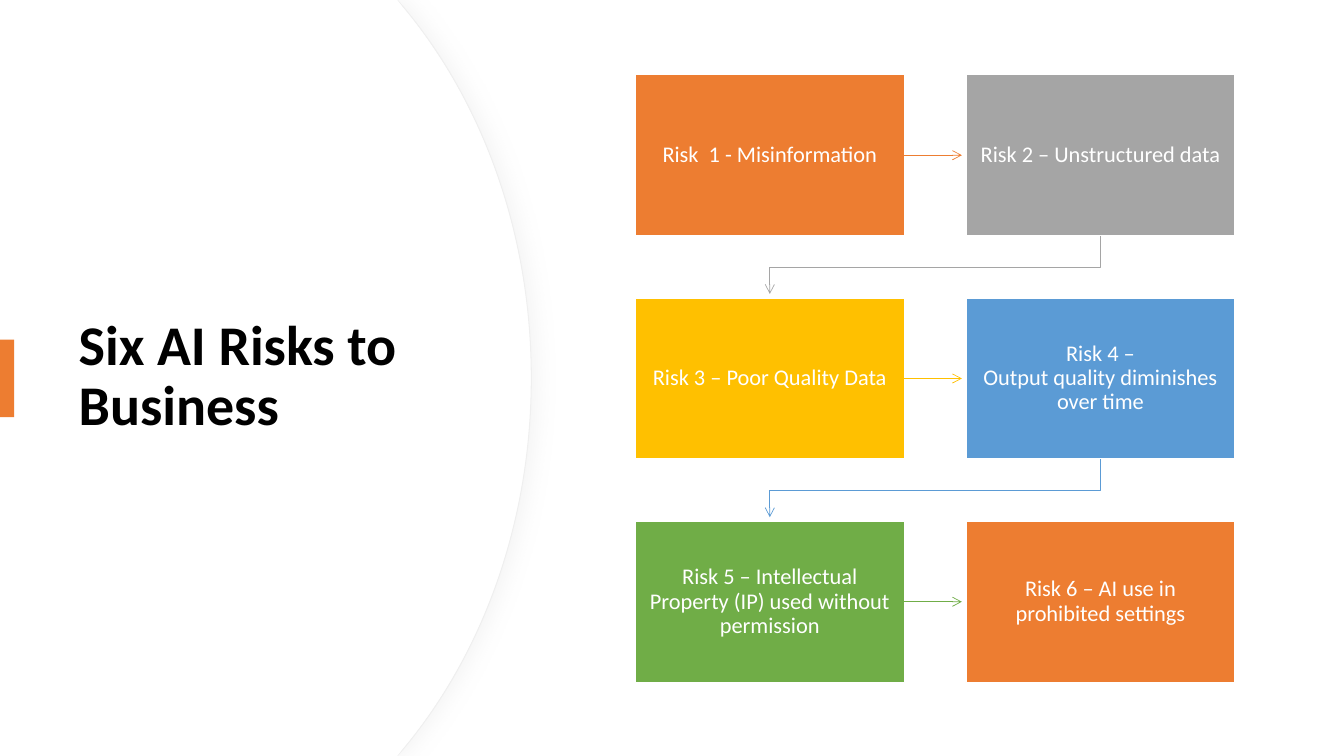
from lxml.etree import SubElement
from pptx import Presentation
from pptx.dml.color import RGBColor
from pptx.enum.shapes import MSO_CONNECTOR, MSO_SHAPE
from pptx.enum.text import MSO_ANCHOR, MSO_AUTO_SIZE, PP_ALIGN
from pptx.oxml import parse_xml
from pptx.oxml.ns import nsdecls, qn
from pptx.util import Inches, Pt

WHITE = RGBColor(0xFF, 0xFF, 0xFF)
BLACK = RGBColor(0, 0, 0)
EDGE = RGBColor(0xEF, 0xEF, 0xEF)
SHADE = RGBColor(0xD9, 0xD9, 0xD9)
ORANGE = RGBColor(0xED, 0x7D, 0x31)
GRAY = RGBColor(0xA5, 0xA5, 0xA5)
GOLD = RGBColor(0xFF, 0xC0, 0x00)
BLUE = RGBColor(0x5B, 0x9B, 0xD5)
GREEN = RGBColor(0x70, 0xAD, 0x47)

# Slide size and risk grid, in inches
WIDE, HIGH = 13.33, 7.5
LEFT, TOP = 6.3, 0.74
BOX_W, BOX_H = 2.67, 1.6
STEP_X, STEP_Y = 3.28, 4.43 / 2
GAP = 0.04  # space between an arrowhead and its box

HARD = chr(160)  # space that keeps words on one line
RISKS = [
    (f"Risk{HARD} 1 - Misinformation", ORANGE),
    ("Risk 2 – Unstructured data", GRAY),
    (f"Risk 3 – Poor Quality{HARD}Data", GOLD),
    (f"Risk 4 – Output{HARD}quality{HARD}diminishes over time", BLUE),
    ("Risk 5 – Intellectual Property (IP) used without permission", GREEN),
    ("Risk 6 – AI use in prohibited settings", ORANGE),
]

FRAME = {"word_wrap": True, "auto_size": MSO_AUTO_SIZE.NONE,
         "vertical_anchor": MSO_ANCHOR.MIDDLE}
INSET = {"margin_left": Inches(0.13), "margin_right": Inches(0.13),
         "margin_top": Inches(0.14), "margin_bottom": Inches(0.14)}
HEAD_FONT = {"name": "Calibri", "size": Pt(40), "bold": True}
RISK_FONT = {"name": "Calibri", "size": Pt(16), "bold": False}


def apply(item, values):
    for name, value in values.items():
        setattr(item, name, value)


def write(shape, text, font, color, align, frame):
    """Put one formatted paragraph in a shape."""
    box = shape.text_frame
    box.text = text
    apply(box, frame)
    para = box.paragraphs[0]
    apply(para, {"alignment": align, "line_spacing": 0.9})
    run = para.runs[0]
    apply(run.font, font)
    run.font.color.rgb = color


def paint(shape, fill=None, line=None, width=1):
    """Set fill and outline; None means neither."""
    shape.shadow.inherit = False
    if fill is None:
        shape.fill.background()
    else:
        shape.fill.solid()
        shape.fill.fore_color.rgb = fill
    if line is None:
        shape.line.fill.background()
    else:
        shape.line.color.rgb = line
        shape.line.width = Pt(width)


def block(slide, x, y, w, h, fill, line=None):
    shape = slide.shapes.add_shape(
        MSO_SHAPE.RECTANGLE, Inches(x), Inches(y), Inches(w), Inches(h))
    paint(shape, fill, line)
    return shape


def trace(slide, points, close):
    """Draw a path through points given in inches."""
    spots = [(Inches(x), Inches(y)) for x, y in points]
    path = slide.shapes.build_freeform(*spots[0])
    path.add_line_segments(spots[1:], close=close)
    return path.convert_to_shape()


def curve(shape, first):
    """Merge three line segments, from the given one, into a cubic curve."""
    lines = list(shape.element.iter(qn("a:lnTo")))[first:first + 3]
    bend = parse_xml(f"<a:cubicBezTo {nsdecls('a')}/>")
    lines[0].addprevious(bend)
    for line in lines:
        bend.append(line[0])
        line.getparent().remove(line)


def panel(slide, right, line=None):
    """White area on the left with a bulging right side."""
    upper = [(3.94, 0), (right - 1.26, 0.08), (right - 0.48, 1.02),
             (right, 2.32)]
    lower = [(x, HIGH - y) for x, y in reversed(upper)]
    shape = trace(slide, [(0, 0), *upper, (right, HIGH / 2), *lower,
                          (0, HIGH)], True)
    for first in (5, 2):  # lower curve, then upper
        curve(shape, first)
    paint(shape, WHITE, line, 0.75)
    return shape


def shade(shape):
    """Soft shadow to the right."""
    effect = shape.element.spPr.find(qn("a:effectLst"))
    cast = SubElement(effect, qn("a:outerShdw"), blurRad=str(Pt(14)),
                      dist=str(Pt(4)), dir="0", algn="l", rotWithShape="0")
    color = SubElement(cast, qn("a:srgbClr"), val=str(SHADE))
    SubElement(color, qn("a:alpha"), val="25000")


def tip(shape):
    """Open arrowhead at the end of a line."""
    line = shape.element.spPr.find(qn("a:ln"))
    SubElement(line, qn("a:tailEnd"), type="arrow")


def across(slide, start, end, color):
    """Straight arrow that stops just before the next box."""
    y = start.top + start.height // 2
    link = slide.shapes.add_connector(
        MSO_CONNECTOR.STRAIGHT, start.left + start.width, y,
        end.left - Inches(GAP), y)
    link.begin_connect(start, 3)
    link.line.color.rgb = color
    link.line.width = Pt(0.5)
    SubElement(link.element.spPr, qn("a:effectLst"))
    tip(link)


def down(slide, row, color):
    """Bent arrow from the right box of a row to the next row."""
    x = LEFT + BOX_W / 2
    y = TOP + row * STEP_Y + BOX_H
    turn, stop = y + (STEP_Y - BOX_H) / 2, TOP + (row + 1) * STEP_Y - GAP
    shape = trace(slide, [(x + STEP_X, y), (x + STEP_X, turn),
                          (x, turn), (x, stop)], False)
    paint(shape, None, color, 0.5)
    tip(shape)


def head(slide):
    title = slide.shapes.title
    apply(title, {"left": Inches(0.68), "top": Inches(1.27),
                  "width": Inches(3.94), "height": Inches(4.95)})
    write(title, "Six AI Risks to Business", HEAD_FONT, BLACK,
          PP_ALIGN.LEFT, FRAME)
    slide.shapes.element.append(title.element)  # in front of the panels


def risks(slide):
    boxes = []
    for i, (text, color) in enumerate(RISKS):
        row, col = divmod(i, 2)
        box = block(slide, LEFT + col * STEP_X, TOP + row * STEP_Y,
                    BOX_W, BOX_H, color, WHITE)
        write(box, text, RISK_FONT, WHITE, PP_ALIGN.CENTER, FRAME | INSET)
        boxes.append(box)
    # Each arrow takes the colour of the box it leaves
    for i, (_, color) in enumerate(RISKS[:-1]):
        if i % 2 == 0:
            across(slide, boxes[i], boxes[i + 1], color)
        else:
            down(slide, i // 2, color)


def main():
    deck = Presentation()
    apply(deck, {"slide_width": Inches(WIDE), "slide_height": Inches(HIGH)})
    slide = deck.slides.add_slide(deck.slide_layouts[5])

    # Left side: curved panel, title and accent bar
    shade(panel(slide, 5.27, EDGE))
    panel(slide, 5.26)
    head(slide)
    block(slide, 0, 3.37, 0.14, 0.77, ORANGE)

    # Right side: risk flow
    risks(slide)
    deck.save("out.pptx")


if __name__ == "__main__":
    main()
